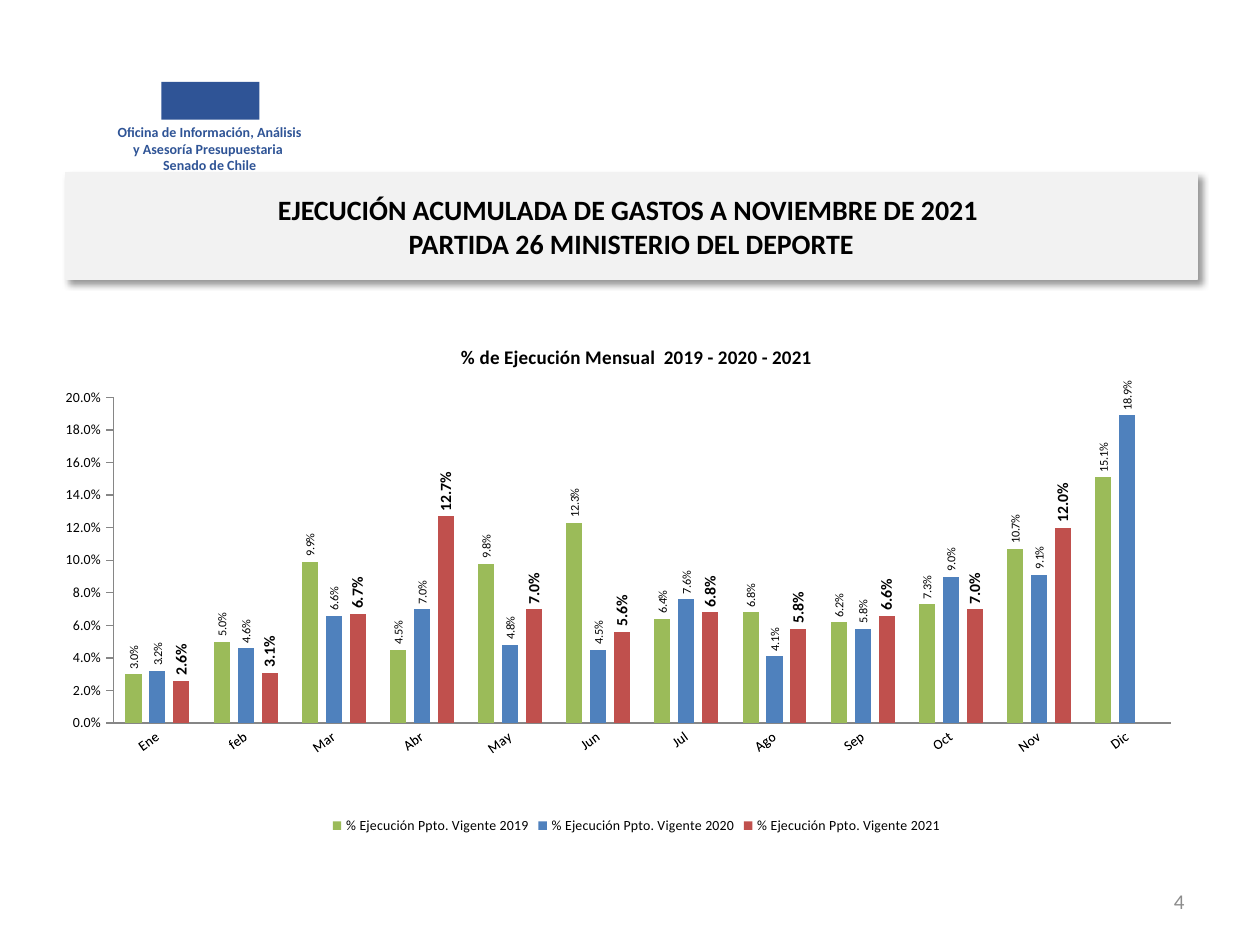
from lxml import etree
from pptx import Presentation
from pptx.chart.data import CategoryChartData
from pptx.dml.color import RGBColor
from pptx.enum.chart import XL_CHART_TYPE, XL_LABEL_POSITION, XL_LEGEND_POSITION, XL_TICK_MARK
from pptx.enum.shapes import MSO_SHAPE
from pptx.enum.text import MSO_ANCHOR, PP_ALIGN
from pptx.oxml import parse_xml
from pptx.oxml.ns import nsdecls, qn
from pptx.util import Inches, Pt

COLUMNS = XL_CHART_TYPE.COLUMN_CLUSTERED
OUTSIDE_END = XL_LABEL_POSITION.OUTSIDE_END
BOTTOM = XL_LEGEND_POSITION.BOTTOM
NO_TICK, OUTER_TICK = XL_TICK_MARK.NONE, XL_TICK_MARK.OUTSIDE
RECTANGLE = MSO_SHAPE.RECTANGLE
TOP, MIDDLE = MSO_ANCHOR.TOP, MSO_ANCHOR.MIDDLE
CENTER, RIGHT = PP_ALIGN.CENTER, PP_ALIGN.RIGHT

COLORS = {
    "white": "FFFFFF", "black": "000000", "band": "F2F2F2", "office": "2F5496",
    "number": "8C8C8C", "axis": "868686",
    "2019": "9BBB59", "2020": "4F81BD", "2021": "C0504D",
}
BODY_FONT = "Calibri"
PERCENT = "0.0%"
WIDTH, HEIGHT = 10, 7.5
LEFT, CONTENT_WIDTH = 0.52, 8.98

SMALL = {"name": BODY_FONT, "size": 8, "bold": True, "color": "office"}
OFFICE = [
    ("Oficina de Información, Análisis y Asesoría Presupuestaria ", SMALL),
    ("Senado de Chile", SMALL),
]
HEADING = [
    ("EJECUCIÓN ACUMULADA DE GASTOS A NOVIEMBRE DE 2021 \vPARTIDA 26 MINISTERIO DEL DEPORTE",
     {"name": BODY_FONT, "size": 16, "bold": True, "color": "black"}),
]
PAGE_NUMBER = [("4", {"name": BODY_FONT, "size": 12, "color": "number"})]

CHART_TITLE = "% de Ejecución Mensual  2019 - 2020 - 2021"
MONTHS = ["Ene", "feb", "Mar", "Abr", "May", "Jun", "Jul", "Ago", "Sep", "Oct", "Nov", "Dic"]
EXECUTION = {
    "2019": [3.0, 5.0, 9.9, 4.5, 9.8, 12.3, 6.4, 6.8, 6.2, 7.3, 10.7, 15.1],
    "2020": [3.2, 4.6, 6.6, 7.0, 4.8, 4.5, 7.6, 4.1, 5.8, 9.0, 9.1, 18.9],
    "2021": [2.6, 3.1, 6.7, 12.7, 7.0, 5.6, 6.8, 5.8, 6.6, 7.0, 12.0, None],
}
LABEL_FORMATS = {
    "2019": {"size": 7, "bold": False},
    "2020": {"size": 7, "bold": False},
    "2021": {"size": 9, "bold": True},
}
PLOT_AREA = {"x": 0.033, "y": 0.143, "w": 0.944, "h": 0.632}


def rgb(name):
    return RGBColor.from_string(COLORS[name])


def style_font(font, values):
    for key, value in values.items():
        if key == "color":
            font.color.rgb = rgb(value)
        else:
            setattr(font, key, Pt(value) if key == "size" else value)


def write(shape, lines, align, anchor):
    frame = shape.text_frame
    frame.word_wrap = True
    frame.vertical_anchor = anchor
    for index, (text, values) in enumerate(lines):
        para = frame.paragraphs[0] if index == 0 else frame.add_paragraph()
        para.text = text
        para.alignment = align
        for span in para.runs:
            style_font(span.font, values)


def add_box(page, place, fill, lines=(), anchor=MIDDLE):
    box = page.shapes.add_shape(RECTANGLE, *map(Inches, place))
    box.shadow.inherit = False
    box.fill.solid()
    box.fill.fore_color.rgb = rgb(fill)
    box.line.fill.background()
    write(box, lines, CENTER, anchor)
    return box


def add_shadow(box):
    effects = box._element.spPr.find(qn("a:effectLst"))
    shadow = etree.SubElement(effects, qn("a:outerShdw"), blurRad=str(Pt(4)), dist=str(Pt(3)),
                              dir=str(45 * 60000), algn="tl", rotWithShape="0")
    color = etree.SubElement(shadow, qn("a:srgbClr"), val=COLORS["black"])
    etree.SubElement(color, qn("a:alpha"), val="40000")


def rotate_text(element, degrees):
    body = element.find(qn("c:txPr")).find(qn("a:bodyPr"))
    body.set("rot", str(degrees * 60000))
    body.set("vert", "horz")


def place_plot(chart):
    plot_area = chart._chartSpace.chart.plotArea
    for old in plot_area.findall(qn("c:layout")):
        plot_area.remove(old)
    parts = '<c:layoutTarget val="inner"/><c:xMode val="edge"/><c:yMode val="edge"/>'
    parts += "".join(f'<c:{key} val="{value}"/>' for key, value in PLOT_AREA.items())
    plot_area.insert(0, parse_xml(
        f'<c:layout {nsdecls("c")}><c:manualLayout>{parts}</c:manualLayout></c:layout>'))


def add_execution_chart(page):
    data = CategoryChartData(number_format=PERCENT)
    data.categories = MONTHS
    for year, values in EXECUTION.items():
        shares = [None if value is None else round(value / 100, 3) for value in values]
        data.add_series(f"% Ejecución Ppto. Vigente {year}", shares)
    place = map(Inches, (LEFT, 2.57, CONTENT_WIDTH, 4.09))
    chart = page.shapes.add_chart(COLUMNS, *place, data).chart
    base = {"name": BODY_FONT, "color": "black"}
    style_font(chart.font, {**base, "size": 10})

    chart.has_title = True
    chart.chart_title.include_in_layout = False
    title = chart.chart_title.text_frame
    title.text = CHART_TITLE
    style_font(title.paragraphs[0].runs[0].font, {**base, "size": 11, "bold": True})

    chart.has_legend = True
    chart.legend.position = BOTTOM
    chart.legend.include_in_layout = False
    style_font(chart.legend.font, {**base, "size": 8})

    for axis, tick in ((chart.category_axis, NO_TICK), (chart.value_axis, OUTER_TICK)):
        axis.major_tick_mark, axis.minor_tick_mark = tick, NO_TICK
        axis.has_major_gridlines = False
        axis.format.line.color.rgb = rgb("axis")
        style_font(axis.tick_labels.font, {**base, "size": 8})
    rotate_text(chart.category_axis._element, -36)
    scale = chart.value_axis
    scale.minimum_scale, scale.maximum_scale, scale.major_unit = 0, 0.2, 0.02
    scale.tick_labels.number_format = PERCENT
    scale.tick_labels.number_format_is_linked = False

    plot = chart.plots[0]
    plot.gap_width, plot.overlap, plot.vary_by_categories = 150, -49, False
    for series, (year, values) in zip(plot.series, LABEL_FORMATS.items()):
        series.format.fill.solid()
        series.format.fill.fore_color.rgb = rgb(year)
        series.invert_if_negative = False
        labels = series.data_labels
        labels.show_value = True
        labels.position = OUTSIDE_END
        labels.number_format = PERCENT
        labels.number_format_is_linked = False
        style_font(labels.font, {**base, **values})
        rotate_text(labels._element, -90)
    place_plot(chart)


def main():
    """Build the monthly budget execution slide."""
    deck = Presentation()
    deck.slide_width, deck.slide_height = Inches(WIDTH), Inches(HEIGHT)
    page = deck.slides.add_slide(deck.slide_layouts[6])
    add_box(page, (0.81, 0.93, 1.71, 0.73), "white", OFFICE, TOP)
    add_box(page, (1.28, 0.65, 0.78, 0.3), "office")
    number = page.shapes.add_textbox(*map(Inches, (7.17, 6.95, 2.33, 0.4)))
    write(number, PAGE_NUMBER, RIGHT, MIDDLE)
    band = add_box(page, (LEFT, 1.37, CONTENT_WIDTH, 0.85), "band", HEADING)
    band.line.color.rgb = rgb("band")
    band.line.width = Pt(0.75)
    add_shadow(band)
    add_execution_chart(page)
    deck.save("out.pptx")


if __name__ == "__main__":
    main()
